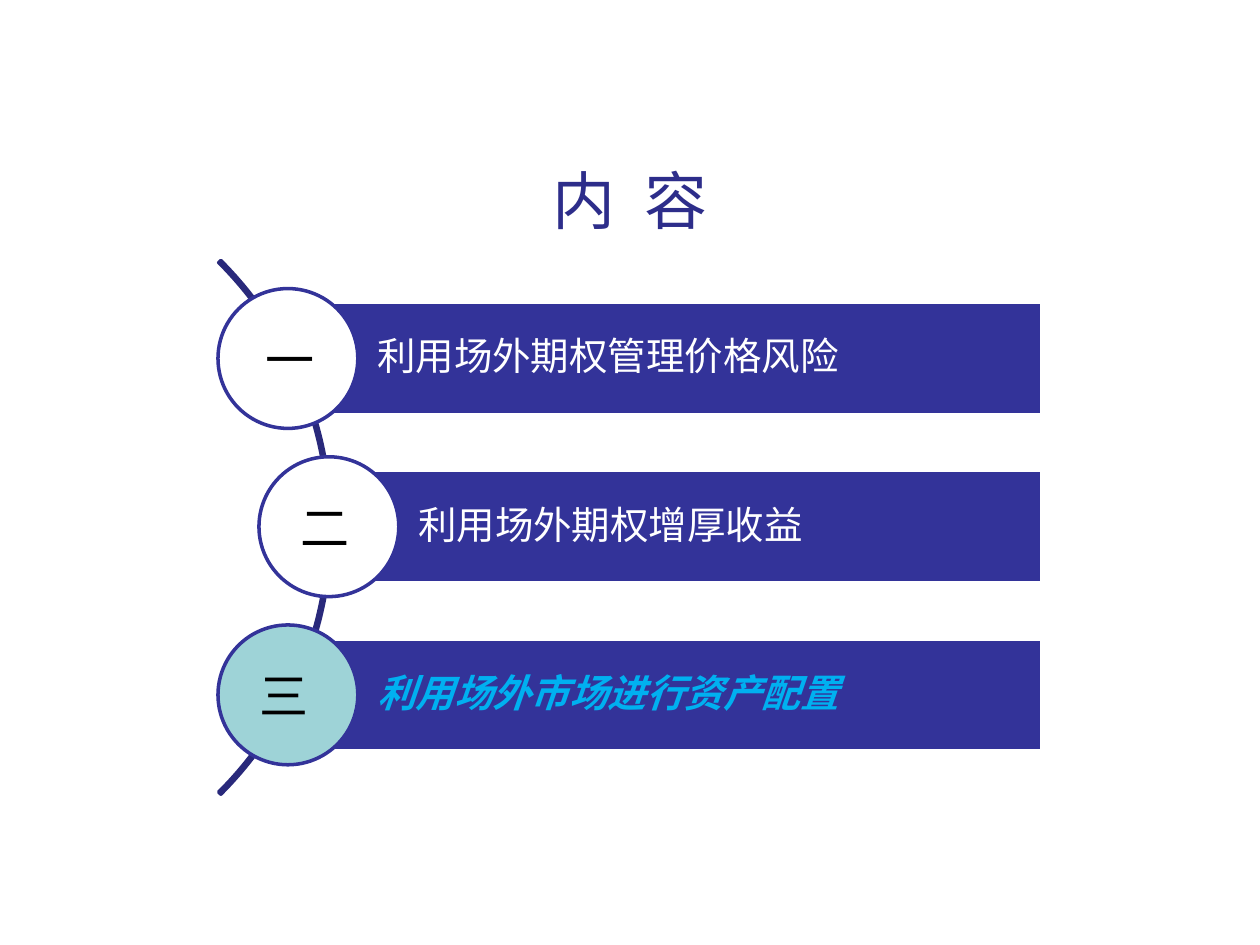
from dataclasses import dataclass

from pptx import Presentation
from pptx.dml.color import RGBColor
from pptx.enum.shapes import MSO_SHAPE
from pptx.enum.text import MSO_ANCHOR, PP_ALIGN
from pptx.util import Inches, Pt

ARC, BAR, CIRCLE = MSO_SHAPE.BLOCK_ARC, MSO_SHAPE.RECTANGLE, MSO_SHAPE.OVAL
MIDDLE = MSO_ANCHOR.MIDDLE
LEFT, CENTER = PP_ALIGN.LEFT, PP_ALIGN.CENTER
COLUMNS, ROWS = 100, 75


@dataclass(frozen=True)
class Theme:
    font: str = "Arial"
    title: str = "2D2D8A"
    arc: str = "29297B"
    bar: str = "333399"
    white: str = "FFFFFF"
    black: str = "000000"
    current_circle: str = "9ED3D7"
    current_text: str = "00B0F0"
    title_size: int = 36
    numeral_size: int = 28
    topic_size: int = 22
    line_width: int = 2


def write_text(frame, text, *, font, size, color, align=LEFT, bold=False,
               italic=False, line_spacing=1.0, wrap=True):
    frame.word_wrap = wrap
    frame.vertical_anchor = MIDDLE
    paragraph = frame.paragraphs[0]
    paragraph.alignment = align
    paragraph.line_spacing = line_spacing
    run = paragraph.add_run()
    run.text = text
    run.font.name = font
    run.font.size = Pt(size)
    run.font.bold = bold
    run.font.italic = italic
    run.font.color.rgb = RGBColor.from_string(color)


class AgendaSlide:
    def __init__(self, presentation, theme):
        self.theme = theme
        self.slide = presentation.slides.add_slide(presentation.slide_layouts[6])
        self.column = presentation.slide_width / COLUMNS
        self.row = presentation.slide_height / ROWS

    def box(self, left, top, width, height):
        """Turn grid columns and rows into slide lengths."""
        return (round(left * self.column), round(top * self.row),
                round(width * self.column), round(height * self.row))

    def shape(self, kind, box, line, fill=None):
        shape = self.slide.shapes.add_shape(kind, *self.box(*box))
        shape.shadow.inherit = False
        if fill:
            shape.fill.solid()
            shape.fill.fore_color.rgb = RGBColor.from_string(fill)
        else:
            shape.fill.background()
        shape.line.color.rgb = RGBColor.from_string(line)
        shape.line.width = Pt(self.theme.line_width)
        return shape

    def text(self, text, box, **text_format):
        frame = self.slide.shapes.add_textbox(*self.box(*box)).text_frame
        write_text(frame, text, font=self.theme.font, align=CENTER, **text_format)

    def title(self, text):
        self.text(text, (5, 11.9, 90, 7.9),
                  size=self.theme.title_size, color=self.theme.title)

    def arc(self, box):
        """Draw a thin arc that opens 45 degrees above and below the right side."""
        shape = self.shape(ARC, box, self.theme.arc)
        for index, value in enumerate((189, 27, 0.004)):
            shape.adjustments[index] = value

    def bar(self, text, left, right, middle, current):
        theme, height = self.theme, 8.9
        shape = self.shape(BAR, (left, middle - height / 2, right - left, height),
                           theme.white, theme.bar)
        frame = shape.text_frame
        frame.margin_left = Inches(0.71)
        frame.margin_top = frame.margin_right = frame.margin_bottom = Inches(0.06)
        write_text(frame, text, font=theme.font, size=theme.topic_size,
                   color=theme.current_text if current else theme.white,
                   bold=current, italic=current, line_spacing=0.9)

    def circle(self, center, middle, current):
        size = 11.1
        self.shape(CIRCLE, (center - size / 2, middle - size / 2, size, size),
                   self.theme.bar,
                   self.theme.current_circle if current else self.theme.white)

    def numeral(self, text, center, middle):
        width, height = 5.9, 5.7
        self.text(text, (center - width / 2, middle - height / 2, width, height),
                  size=self.theme.numeral_size, color=self.theme.black, wrap=False)


def main():
    presentation = Presentation()
    presentation.slide_width, presentation.slide_height = Inches(10), Inches(7.5)
    agenda = AgendaSlide(presentation, Theme())
    agenda.title("内  容")
    agenda.arc((-33.6, 11.9, 59.9, 59.9))

    first_middle, pitch, bar_right = 28.45, 13.35, 82.7
    # numeral, topic, circle center, numeral center, is current
    topics = [
        ("一", "利用场外期权管理价格风险", 22.85, 23.05, False),
        ("二", "利用场外期权增厚收益", 26.1, 25.75, False),
        ("三", "利用场外市场进行资产配置", 22.85, 22.55, True),
    ]
    for index, (numeral, topic, center, numeral_center, current) in enumerate(topics):
        middle = first_middle + index * pitch
        agenda.bar(topic, center, bar_right, middle, current)
        agenda.circle(center, middle, current)
        agenda.numeral(numeral, numeral_center, middle)

    presentation.save("out.pptx")


if __name__ == "__main__":
    main()
